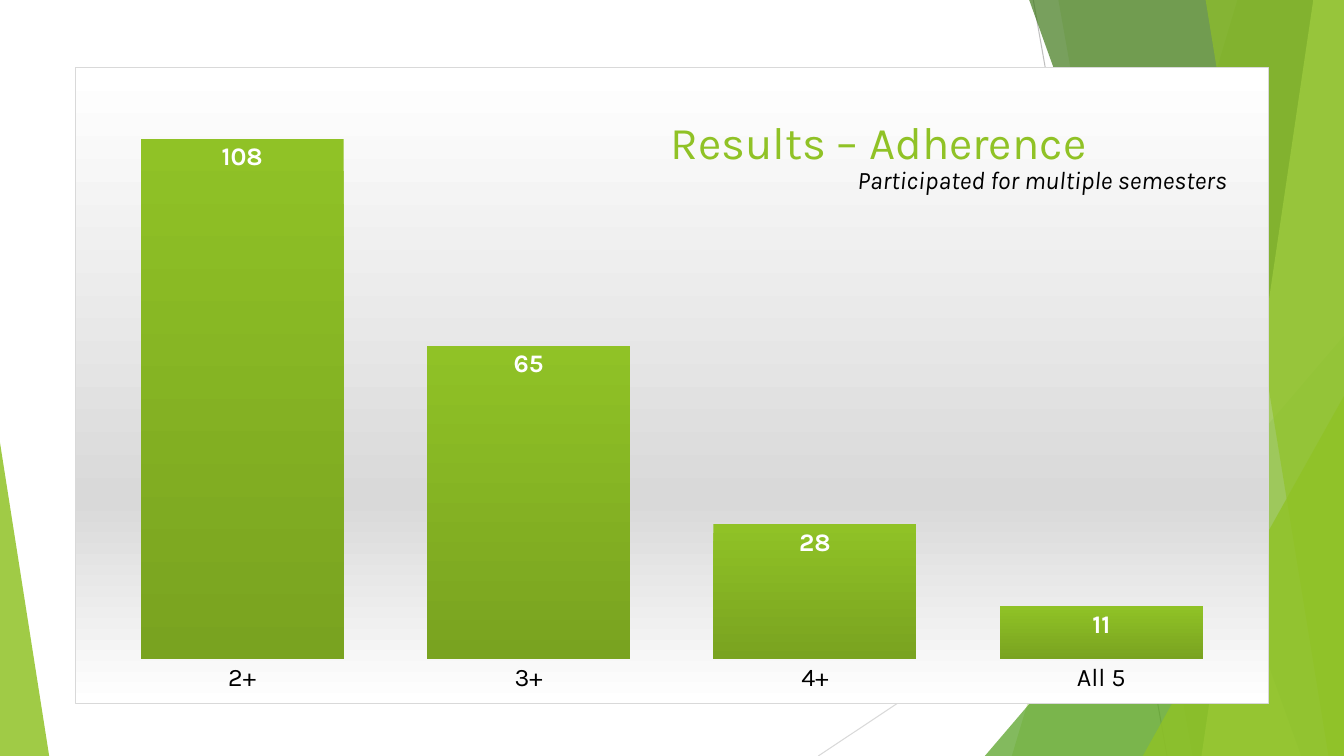
from lxml.etree import SubElement
from pptx import Presentation
from pptx.chart.data import CategoryChartData
from pptx.dml.color import RGBColor
from pptx.enum.chart import XL_CHART_TYPE as CT, XL_LABEL_POSITION as LP, XL_TICK_MARK as TM
from pptx.enum.shapes import MSO_CONNECTOR as MC, MSO_SHAPE as MS
from pptx.enum.text import MSO_ANCHOR as MA, MSO_AUTO_SIZE as AS, PP_ALIGN as PA
from pptx.oxml import parse_xml
from pptx.oxml.ns import nsdecls, qn
from pptx.util import Cm, Pt

COLORS = {
    "lime": "90C226", "olive": "79A320", "leaf": "54A021", "forest": "3F7819",
    "pale": "C0E474", "white": "FFFFFF", "black": "000000",
    "silver": "D9D9D9", "gray": "BFBFBF",
}
WIDTH, HEIGHT = 33.87, 19.05


class SlideBuilder:
    def __init__(self, slide, font):
        self.s = slide
        self.font = font

    def color(self, name):
        return RGBColor.from_string(COLORS[name])

    def style(self, font, size, color, bold=False, italic=False):
        font.name, font.size = self.font, Pt(size)
        font.bold, font.italic = bold, italic
        font.color.rgb = self.color(color)

    def gradient(self, stops):
        gs = "".join(
            f'<a:gs pos="{pos * 1000}"><a:srgbClr val="{COLORS[name]}"/></a:gs>'
            for pos, name in stops)
        return (f'<a:gradFill {nsdecls("a")} rotWithShape="1"><a:gsLst>{gs}</a:gsLst>'
                '<a:lin ang="5400000" scaled="0"/></a:gradFill>')

    def line(self, x1, y1, x2, y2, color):
        c = self.s.shapes.add_connector(MC.STRAIGHT, Cm(x1), Cm(y1), Cm(x2), Cm(y2))
        c.line.color.rgb = self.color(color)
        c.line.width = Pt(0.75)
        SubElement(c._element.spPr, qn("a:effectLst"))

    def paint(self, sp, color, opacity):
        sp.shadow.inherit = False
        sp.fill.solid()
        sp.fill.fore_color.rgb = self.color(color)
        clr = sp._element.spPr.find(qn("a:solidFill"))[0]
        SubElement(clr, qn("a:alpha"), val=str(opacity * 1000))
        sp.line.fill.background()

    def band(self, top_x, bottom_x, color, opacity):
        fb = self.s.shapes.build_freeform(Cm(top_x), Cm(-0.02))
        corners = [(WIDTH, -0.02), (WIDTH, HEIGHT), (bottom_x, HEIGHT)]
        fb.add_line_segments([(Cm(x), Cm(y)) for x, y in corners])
        self.paint(fb.convert_to_shape(), color, opacity)

    def triangle(self, x, y, w, peak, color, opacity):
        sp = self.s.shapes.add_shape(
            MS.ISOSCELES_TRIANGLE, Cm(x), Cm(y), Cm(w), Cm(HEIGHT - y))
        sp.adjustments[0] = peak
        self.paint(sp, color, opacity)

    def column_chart(self, x, y, w, h, values):
        data = CategoryChartData()
        data.categories = list(values)
        data.add_series("Series 1", list(values.values()))
        frame = self.s.shapes.add_chart(
            CT.COLUMN_CLUSTERED, Cm(x), Cm(y), Cm(w), Cm(h), data)
        chart = frame.chart
        chart.has_legend = chart.has_title = False
        self.style(chart.font, 10, "black")

        cat = chart.category_axis
        cat.major_tick_mark = cat.minor_tick_mark = TM.NONE
        cat.format.line.fill.background()
        self.style(cat.tick_labels.font, 18, "black")
        val = chart.value_axis
        val.minimum_scale, val.maximum_scale = 0, 120
        val.has_major_gridlines = val.visible = False

        plot = chart.plots[0]
        plot.gap_width, plot.vary_by_categories = 41, False
        ser = plot.series[0]
        ser._element.get_or_add_spPr().append(
            parse_xml(self.gradient([(0, "lime"), (100, "olive")])))
        labels = ser.data_labels
        labels.show_value, labels.position = True, LP.INSIDE_END
        self.style(labels.font, 18, "white", bold=True)

        backdrop = self.gradient([(0, "white"), (68, "silver"), (100, "white")])
        chart._chartSpace.find(qn("c:chart")).addnext(parse_xml(
            f'<c:spPr {nsdecls("c", "a")}>{backdrop}<a:ln w="9525"><a:solidFill>'
            f'<a:srgbClr val="{COLORS["silver"]}"/></a:solidFill></a:ln></c:spPr>'))
        area = chart._chartSpace.find(".//" + qn("c:plotArea"))
        for old in area.findall(qn("c:layout")):
            area.remove(old)
        area.insert(0, parse_xml(
            f'<c:layout {nsdecls("c")}><c:manualLayout><c:layoutTarget val="inner"/>'
            '<c:xMode val="edge"/><c:yMode val="edge"/><c:x val="0.02"/><c:y val="0.02"/>'
            '<c:w val="0.96"/><c:h val="0.91"/></c:manualLayout></c:layout>'))

    def title(self, x, y, w, h, text):
        sp = self.s.shapes.title
        sp.left, sp.top, sp.width, sp.height = Cm(x), Cm(y), Cm(w), Cm(h)
        self.s.shapes._spTree.append(sp._element)
        tf = sp.text_frame
        tf.auto_size, tf.vertical_anchor = AS.NONE, MA.MIDDLE
        self.add_text(tf, text, PA.LEFT, 32.4, "lime")

    def caption(self, x, y, w, h, text):
        tf = self.s.shapes.add_textbox(Cm(x), Cm(y), Cm(w), Cm(h)).text_frame
        tf.word_wrap, tf.auto_size = True, AS.SHAPE_TO_FIT_TEXT
        self.add_text(tf, text, PA.RIGHT, 18, "black", italic=True)

    def add_text(self, tf, text, align, size, color, italic=False):
        p = tf.paragraphs[0]
        p.alignment = align
        r = p.add_run()
        r.text = text
        self.style(r.font, size, color, italic=italic)


def main():
    prs = Presentation()
    prs.slide_width, prs.slide_height = Cm(WIDTH), Cm(HEIGHT)
    b = SlideBuilder(prs.slides.add_slide(prs.slide_layouts[5]), "Karla")

    b.line(26.04, 0, 29.41, HEIGHT, "gray")
    b.line(WIDTH, 10.24, 20.62, HEIGHT, "silver")
    b.band(31.19, 25.5, "lime", 30)
    b.band(26.67, 30.05, "lime", 20)
    b.triangle(24.82, 8.46, 9.05, 1, "leaf", 72)
    b.band(25.93, 32.79, "forest", 70)
    b.band(33.1, 30.28, "pale", 70)
    b.band(30.38, 33.48, "lime", 65)
    b.triangle(28.8, 9.98, 5.07, 1, "lime", 80)
    b.triangle(0, 11.15, 1.24, 0, "lime", 85)

    b.column_chart(1.88, 1.7, 30.1, 16.05, {"2+": 108, "3+": 65, "4+": 28, "All 5": 11})
    b.title(16.64, 2.57, 23.88, 1.96, "Results – Adherence")
    b.caption(20.07, 4.01, 11.1, 1.02, "Participated for multiple semesters")
    prs.save("out.pptx")


if __name__ == "__main__":
    main()
